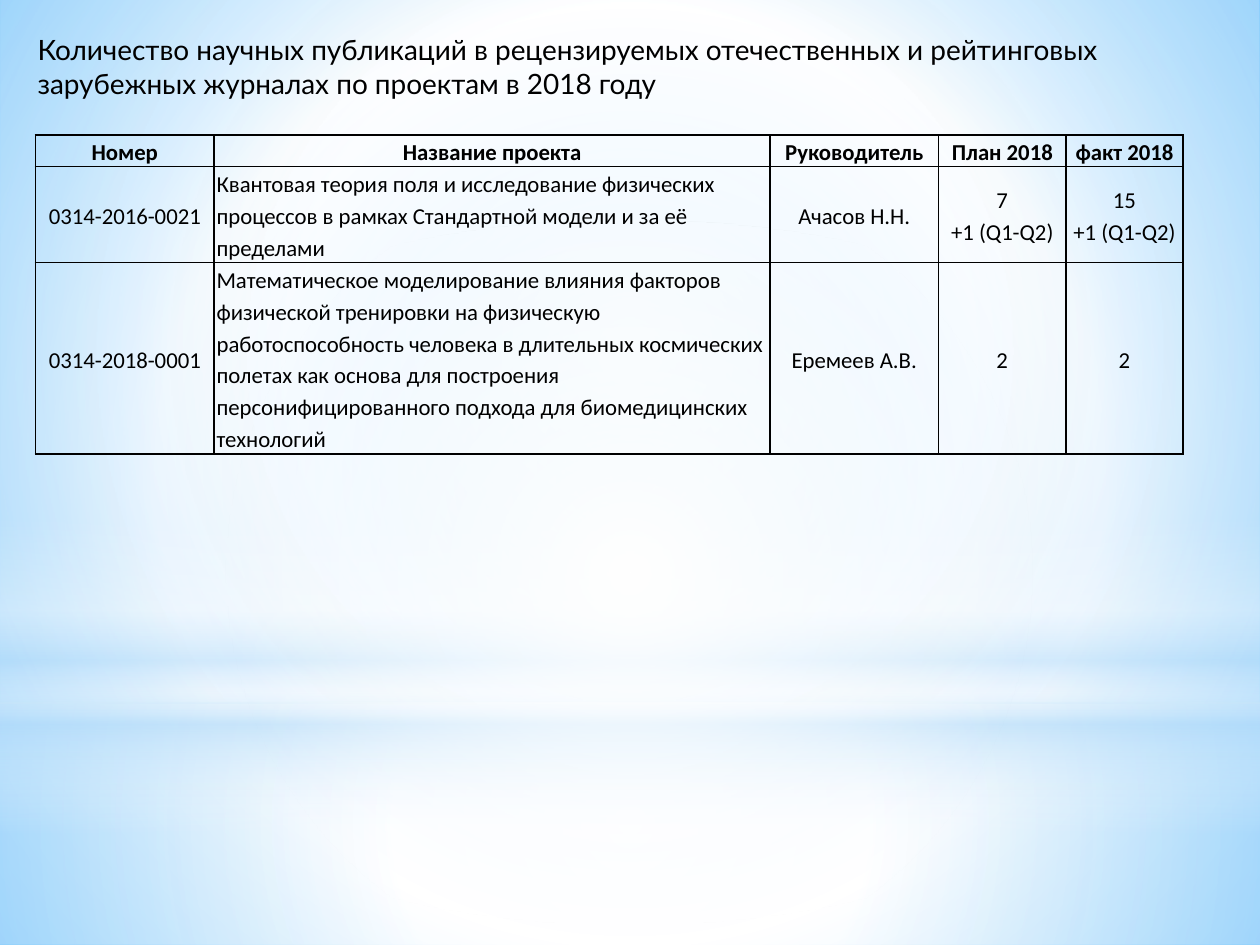
from dataclasses import dataclass

from lxml import etree
from pptx import Presentation
from pptx import util as u
from pptx.dml import color
from pptx.enum import shapes, text
from pptx.oxml import ns

BLACK = "000000"
WHITE = "FFFFFF"
SKY = "B4DCFA"
CENTER = text.PP_ALIGN.CENTER
LEFT = text.PP_ALIGN.LEFT


@dataclass
class Stop:
    position: int
    tint: str
    opacity: int = 100


@dataclass
class Glow:
    top: float
    height: float
    stops: list[Stop]
    kind: shapes.MSO_SHAPE = shapes.MSO_SHAPE.RECTANGLE
    radial: bool = True


@dataclass
class Column:
    heading: str
    width: float
    align: text.PP_ALIGN = CENTER


BACKDROP = [Stop(0, "99D4FE"), Stop(60, WHITE), Stop(100, "54BDFF")]
GLOWS = [
    Glow(5.58, 1.92, [Stop(0, WHITE, 90), Stop(37, WHITE, 75), Stop(100, SKY, 78)]),
    Glow(0, 5.58, [Stop(0, WHITE, 88), Stop(48, WHITE, 61), Stop(100, SKY, 78)]),
    Glow(4.12, 2.5, [Stop(0, WHITE, 0), Stop(29, WHITE, 29), Stop(45, SKY, 40),
                     Stop(55, WHITE, 25), Stop(65, SKY, 60), Stop(100, WHITE, 0)],
         radial=False),
    Glow(1.75, 5.58, [Stop(0, WHITE), Stop(56, WHITE, 0), Stop(100, WHITE, 0)],
         kind=shapes.MSO_SHAPE.OVAL),
]
TITLE = ("Количество научных публикаций в рецензируемых отечественных и рейтинговых "
         "зарубежных журналах по проектам в 2018 году")
COLUMNS = [
    Column("Номер", 1.42),
    Column("Название проекта", 4.41, LEFT),
    Column("Руководитель", 1.34),
    Column("План 2018", 1.01),
    Column("факт 2018", 0.93),
]
PROJECTS = [
    ["0314-2016-0021",
     "Квантовая теория поля и исследование физических процессов в рамках "
     "Стандартной модели и за её пределами",
     "Ачасов Н.Н.", "7\n+1 (Q1-Q2)", "15\n+1 (Q1-Q2)"],
    ["0314-2018-0001",
     "Математическое моделирование влияния факторов физической тренировки на "
     "физическую работоспособность человека в длительных космических полетах как "
     "основа для построения персонифицированного подхода для биомедицинских технологий",
     "Еремеев А.В.", "2", "2"],
]
ROW_HEIGHTS = [0.25, 0.76, 1.52]


def rgb(code: str) -> color.RGBColor:
    return color.RGBColor.from_string(code)


def add_part(parent, tag: str, **attributes):
    part = etree.SubElement(parent, ns.qn(tag))
    for name, value in attributes.items():
        part.set(name, str(value))
    return part


def set_gradient(owner, stops: list[Stop], radial: bool = True) -> None:
    solid = owner.find(ns.qn("a:solidFill"))
    gradient = etree.Element(ns.qn("a:gradFill"), rotWithShape="1")
    stop_list = add_part(gradient, "a:gsLst")
    for stop in stops:
        mark = add_part(stop_list, "a:gs", pos=stop.position * 1000)
        tint = add_part(mark, "a:srgbClr", val=stop.tint)
        if stop.opacity < 100:
            add_part(tint, "a:alpha", val=stop.opacity * 1000)
    if radial:
        circle = add_part(gradient, "a:path", path="circle")
        add_part(circle, "a:fillToRect", l=50000, t=50000, r=50000, b=50000)
    else:
        add_part(gradient, "a:lin", ang=90 * 60000, scaled=0)
    owner.replace(solid, gradient)


def draw_backdrop(page) -> None:
    fill = page.background.fill
    fill.solid()
    fill.fore_color.rgb = rgb(WHITE)
    set_gradient(page.element.xpath(".//p:bgPr")[0], BACKDROP)


def draw_glow(page, glow: Glow) -> None:
    shape = page.shapes.add_shape(glow.kind, 0, u.Inches(glow.top),
                                  u.Inches(10), u.Inches(glow.height))
    shape.shadow.inherit = False
    shape.line.fill.background()
    shape.fill.solid()
    shape.fill.fore_color.rgb = rgb(WHITE)
    set_gradient(shape.element.spPr, glow.stops, glow.radial)


def write_text(frame, content: str, *, font: str, size: float, bold: bool = False,
               align: text.PP_ALIGN = LEFT, spacing: float = 1.0) -> None:
    frame.word_wrap = True
    for index, line in enumerate(content.split("\n")):
        para = frame.add_paragraph() if index else frame.paragraphs[0]
        para.alignment = align
        para.line_spacing = spacing
        span = para.add_run()
        span.text = line
        span.font.name = font
        span.font.size = u.Pt(size)
        span.font.bold = bold
        span.font.color.rgb = rgb(BLACK)


def set_borders(cell) -> None:
    properties = cell._tc.get_or_add_tcPr()
    for index, side in enumerate(("a:lnL", "a:lnR", "a:lnT", "a:lnB")):
        border = add_part(properties, side, w=u.Pt(1))
        add_part(add_part(border, "a:solidFill"), "a:srgbClr", val=BLACK)
        properties.insert(index, border)


def draw_table(page) -> None:
    rows = [[column.heading for column in COLUMNS], *PROJECTS]
    width = sum(column.width for column in COLUMNS)
    table = page.shapes.add_table(len(rows), len(COLUMNS), u.Inches(0.28), u.Inches(1.07),
                                  u.Inches(width), u.Inches(sum(ROW_HEIGHTS))).table
    table.horz_banding = False
    for index, column in enumerate(COLUMNS):
        table.columns[index].width = u.Inches(column.width)
    for row_index, values in enumerate(rows):
        table.rows[row_index].height = u.Inches(ROW_HEIGHTS[row_index])
        is_header = row_index == 0
        for column_index, value in enumerate(values):
            cell = table.cell(row_index, column_index)
            cell.fill.background()
            cell.margin_left = cell.margin_right = u.Inches(0.02)
            cell.margin_top = cell.margin_bottom = 0
            cell.vertical_anchor = text.MSO_ANCHOR.MIDDLE
            align = CENTER if is_header else COLUMNS[column_index].align
            write_text(cell.text_frame, value, font="Calibri", size=13,
                       bold=is_header, align=align, spacing=1.15)
            set_borders(cell)


def draw_title(page) -> None:
    box = page.shapes.add_textbox(u.Inches(0.2), u.Inches(0.21),
                                  u.Inches(9.53), u.Inches(0.64))
    write_text(box.text_frame, TITLE, font="Lato", size=16)


def main() -> None:
    deck = Presentation()
    deck.slide_width = u.Inches(10)
    deck.slide_height = u.Inches(7.5)
    page = deck.slides.add_slide(deck.slide_layouts[6])
    draw_backdrop(page)
    for glow in GLOWS:
        draw_glow(page, glow)
    draw_table(page)
    draw_title(page)
    deck.save("out.pptx")


if __name__ == "__main__":
    main()
